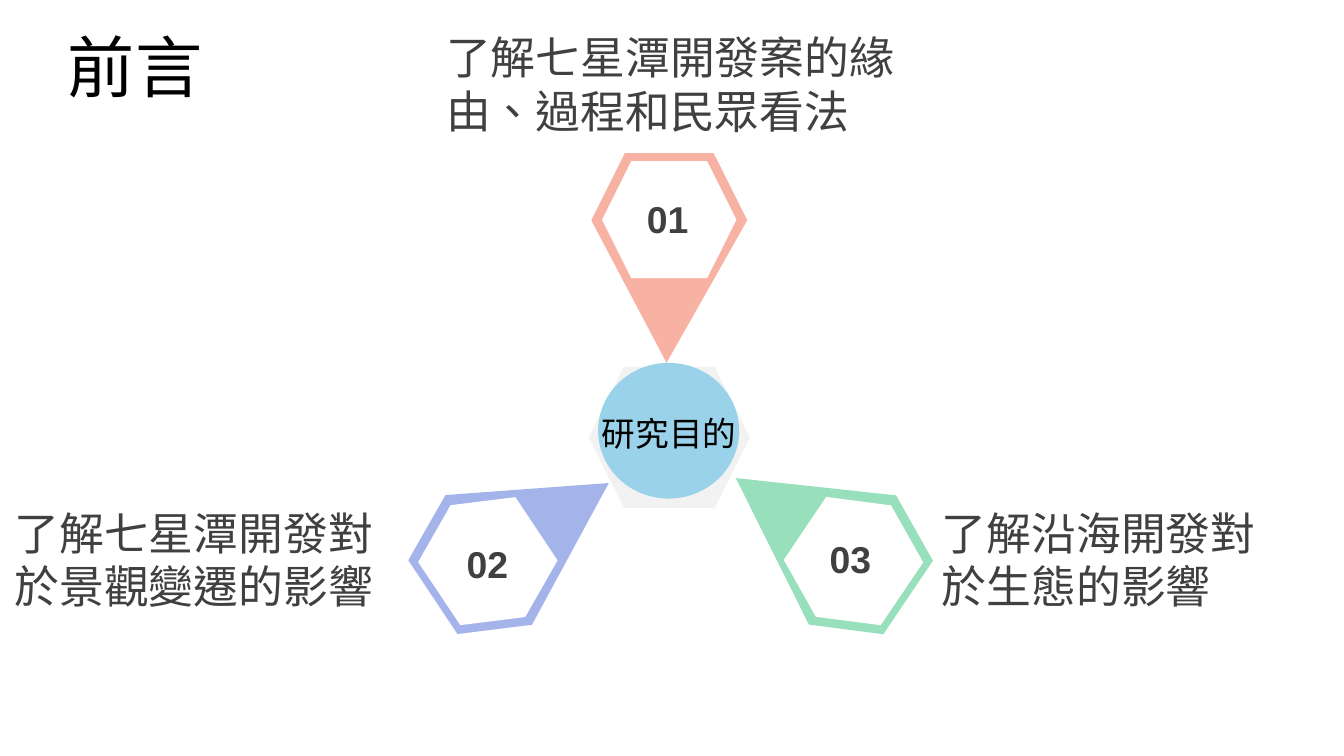
import pptx
import pptx.util
import pptx.dml.color
import pptx.enum.lang
import pptx.enum.shapes
import pptx.enum.text

Inches = pptx.util.Inches
SHAPES = pptx.enum.shapes.MSO_SHAPE
ALIGN = pptx.enum.text.PP_ALIGN
ANCHOR = pptx.enum.text.MSO_ANCHOR
AUTO_SIZE = pptx.enum.text.MSO_AUTO_SIZE
LANGUAGE = pptx.enum.lang.MSO_LANGUAGE_ID.TRADITIONAL_CHINESE

# Content
COLORS = {
    "coral": "F8B2A3", "violet": "A4B4EA", "mint": "98DFBB", "sky": "9AD3E9",
    "pale": "F2F2F2", "white": "FFFFFF", "gray": "404040", "black": "000000",
}
TITLE = ("前言", (-0.12, 0.17, 2.25, 0.63))
HUB = ("研究目的", (4.38, 3.02, 1.34, 0.4))
# Each aim: color, pin corner, hexagon corner, clockwise turn,
# number and its box, wording and its box
AIMS = [
    ("coral", (4.4, 1.14), (4.48, 1.2), 0,
     "01", (4.71, 1.41, 0.51, 0.44),
     "了解七星潭開發案的緣由、過程和民眾看法", (3.22, 0.17, 3.55, 0.91)),
    ("violet", (3.29, 3.23), (3.13, 3.74), 236.3,
     "02", (3.37, 3.98, 0.51, 0.44),
     "了解七星潭開發對於景觀變遷的影響", (0.01, 3.71, 2.93, 0.91)),
    ("mint", (5.53, 3.23), (5.85, 3.74), 124,
     "03", (5.94, 3.94, 0.64, 0.44),
     "了解沿海開發對於生態的影響", (6.91, 3.71, 2.55, 0.91)),
]
# Upright pin outline, tip at the bottom
PIN = [(0.25, 0), (0.91, 0), (1.16, 0.5), (0.56, 1.56), (0, 0.5)]
HEXAGON_SIZE = (1, 0.87)

# A 16:9 page
deck = pptx.Presentation()
deck.slide_width = Inches(10)
deck.slide_height = deck.slide_width * 9 // 16
page = deck.slides.add_slide(deck.slide_layouts[6])


def rgb(name):
    return pptx.dml.color.RGBColor.from_string(COLORS[name])


def paint(shape, color, turn=0):
    shape.shadow.inherit = False
    shape.fill.solid()
    shape.fill.fore_color.rgb = rgb(color)
    shape.line.fill.background()
    shape.rotation = turn


def add_preset(kind, place, color, turn=0):
    shape = page.shapes.add_shape(kind, *map(Inches, place))
    paint(shape, color, turn)


def add_pin(corner, color, turn):
    left, top = corner
    points = [(Inches(left + x), Inches(top + y)) for x, y in PIN]
    builder = page.shapes.build_freeform(*points[0])
    builder.add_line_segments(points[1:], close=True)
    paint(builder.convert_to_shape(), color, turn)


def add_text(text, place, size, color="gray", bold=False, align=ALIGN.LEFT,
             anchor=ANCHOR.TOP, fit=AUTO_SIZE.SHAPE_TO_FIT_TEXT):
    box = page.shapes.add_textbox(*map(Inches, place))
    frame = box.text_frame
    frame.word_wrap = True
    frame.auto_size = fit
    frame.vertical_anchor = anchor
    para = frame.paragraphs[0]
    para.text = text
    para.alignment = align
    para.font.name = "Arial"
    para.font.size = pptx.util.Pt(size)
    para.font.bold = bold
    para.font.color.rgb = rgb(color)
    para.font.language_id = LANGUAGE


# Title
add_text(*TITLE, 36, "black", align=ALIGN.CENTER, anchor=ANCHOR.MIDDLE,
         fit=AUTO_SIZE.NONE)

# Pins around the hub, with their numbers and wording
add_preset(SHAPES.HEXAGON, (4.38, 2.73, 1.2, 1.05), "pale")
for color, pin, hexagon, turn, number, number_box, aim, aim_box in AIMS:
    add_pin(pin, color, turn)
    add_preset(SHAPES.HEXAGON, hexagon + HEXAGON_SIZE, "white", turn)
    add_text(number, number_box, 20, bold=True, align=ALIGN.RIGHT)
    add_text(aim, aim_box, 24)

# Hub
add_preset(SHAPES.OVAL, (4.45, 2.7, 1.05, 1.01), "sky")
add_text(*HUB, 18, "black")

deck.save("out.pptx")
